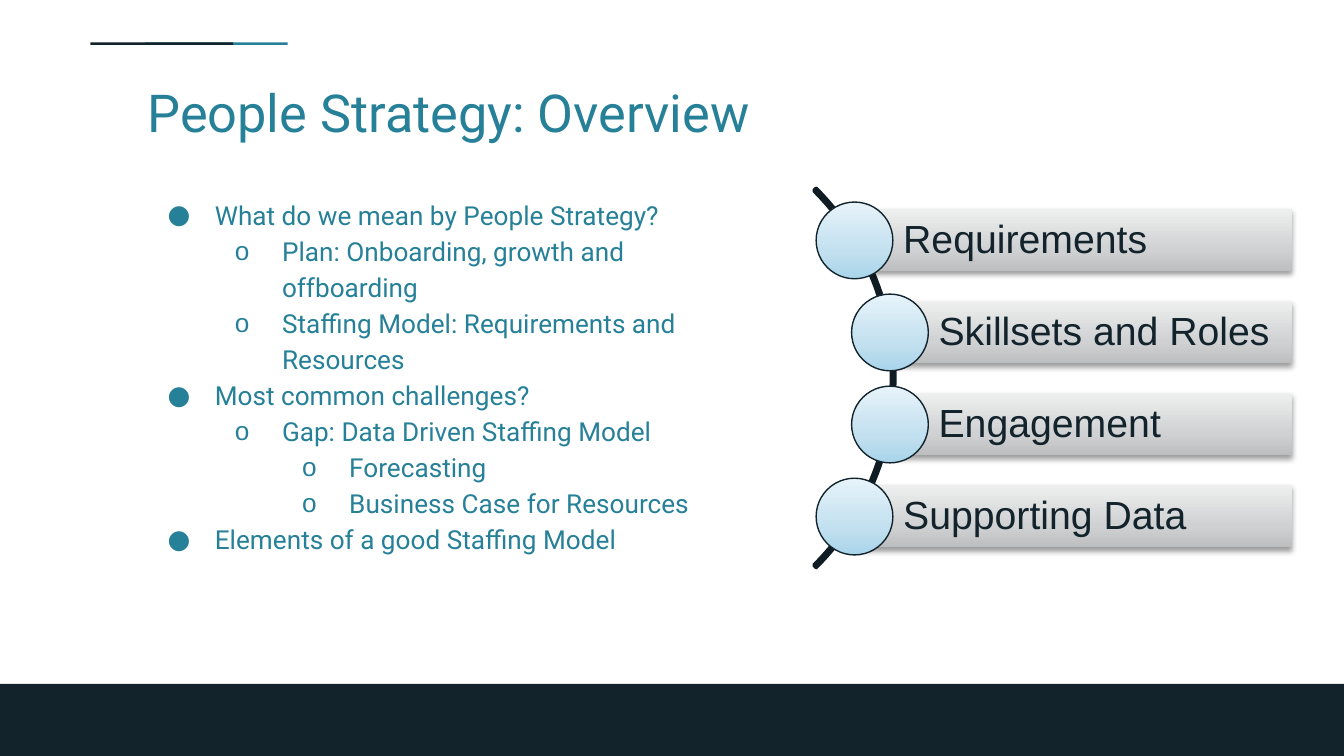
import lxml.etree
import pptx
import pptx.dml.color
import pptx.enum.shapes
import pptx.enum.text
import pptx.oxml.ns
import pptx.util
import copy

Cm = pptx.util.Cm
Pt = pptx.util.Pt
qn = pptx.oxml.ns.qn
RGBColor = pptx.dml.color.RGBColor
MSO_SHAPE = pptx.enum.shapes.MSO_SHAPE
PP_ALIGN = pptx.enum.text.PP_ALIGN
MSO_ANCHOR = pptx.enum.text.MSO_ANCHOR

TEAL = RGBColor(0x26, 0x80, 0x98)
NAVY = RGBColor(0x13, 0x23, 0x2C)
SPINE = RGBColor(0x0F, 0x1C, 0x23)
BLACK = RGBColor(0, 0, 0)
GREYS = [RGBColor(0xBC, 0xBE, 0xBF), RGBColor(0xD0, 0xD1, 0xD2), RGBColor(0xED, 0xEE, 0xEE)]
BLUES = [RGBColor(0xA8, 0xD4, 0xEA), RGBColor(0xC2, 0xE0, 0xEF), RGBColor(0xE7, 0xF3, 0xFA)]

OUTLINE = [
    (0, 1.27, "●", "What do we mean by People Strategy?"),
    (1, 2.54, "o", "Plan: Onboarding, growth and offboarding"),
    (1, 2.54, "o", "Staffing Model: Requirements and Resources"),
    (0, 1.27, "●", "Most common challenges?"),
    (2, 2.54, "o", "Gap: Data Driven Staffing Model"),
    (3, 3.81, "o", "Forecasting"),
    (3, 3.81, "o", "Business Case for Resources"),
    (0, 1.27, "●", "Elements of a good Staffing Model"),
]
ELEMENTS = [
    ("Requirements", 16.15),
    ("Skillsets and Roles", 16.82),
    ("Engagement", 16.82),
    ("Supporting Data", 16.15),
]


def add_plain_shape(slide, kind, left, top, width, height):
    shape = slide.shapes.add_shape(kind, Cm(left), Cm(top), Cm(width), Cm(height))
    shape.shadow.inherit = False
    shape.line.fill.background()
    return shape


def add_block(slide, left, top, width, height, color):
    block = add_plain_shape(slide, MSO_SHAPE.RECTANGLE, left, top, width, height)
    block.fill.solid()
    block.fill.fore_color.rgb = color


def fill_upward(shape, colors):
    shape.fill.gradient()
    shape.fill.gradient_angle = 90
    stop_list = shape._element.spPr.find(qn("a:gradFill")).find(qn("a:gsLst"))
    stop_list.insert(1, copy.deepcopy(stop_list[0]))
    for stop, color, position in zip(shape.fill.gradient_stops, colors, (0, 0.35, 1)):
        stop.color.rgb = color
        stop.position = position


def add_drop_shadow(shape):
    effects = shape._element.spPr.find(qn("a:effectLst"))
    shadow = lxml.etree.SubElement(
        effects, qn("a:outerShdw"), blurRad=str(Pt(3.1)), dist=str(Pt(1.6)),
        dir="5400000", rotWithShape="0")
    color = lxml.etree.SubElement(shadow, qn("a:srgbClr"), val=str(BLACK))
    lxml.etree.SubElement(color, qn("a:alpha"), val="38000")


def set_frame(frame, anchor, left, others):
    frame.word_wrap = True
    frame.auto_size = pptx.enum.text.MSO_AUTO_SIZE.NONE
    frame.vertical_anchor = anchor
    frame.margin_left = Cm(left)
    frame.margin_top = frame.margin_right = frame.margin_bottom = Cm(others)


def add_run(paragraph, text, font, size, color):
    paragraph.alignment = PP_ALIGN.LEFT
    run = paragraph.add_run()
    run.text = text
    run.font.name = font
    run.font.size = Pt(size)
    run.font.color.rgb = color


def set_bullet(paragraph, mark, indent):
    properties = paragraph._p.get_or_add_pPr()
    properties.set("marL", str(Cm(indent)))
    properties.set("indent", str(-Cm(0.89)))
    color = lxml.etree.SubElement(properties, qn("a:buClr"))
    lxml.etree.SubElement(color, qn("a:srgbClr"), val=str(TEAL))
    typeface = "Roboto" if mark == "●" else "Arial"
    lxml.etree.SubElement(properties, qn("a:buFont"), typeface=typeface)
    lxml.etree.SubElement(properties, qn("a:buChar"), char=mark)


def place(placeholder, left, top, width, height):
    placeholder.left, placeholder.top = Cm(left), Cm(top)
    placeholder.width, placeholder.height = Cm(width), Cm(height)
    set_frame(placeholder.text_frame, MSO_ANCHOR.TOP, 0.25, 0.25)


def add_title(slide):
    title = slide.shapes.title
    place(title, 2.54, 1.27, 23.67, 1.6)
    add_run(title.text_frame.paragraphs[0], "People Strategy: Overview", "Roboto", 28, TEAL)


def add_outline(slide):
    outline = slide.placeholders[1]
    place(outline, 2.54, 3.43, 11.28, 8.03)
    frame = outline.text_frame
    for number, (level, indent, mark, text) in enumerate(OUTLINE):
        paragraph = frame.add_paragraph() if number else frame.paragraphs[0]
        set_bullet(paragraph, mark, indent)
        paragraph.level = level
        paragraph.line_spacing = 1.15
        paragraph.space_before = Pt(0)
        add_run(paragraph, text, "Roboto", 14, TEAL)


def add_spine(slide):
    spine = add_plain_shape(slide, MSO_SHAPE.BLOCK_ARC, 6.78, 2.08, 10.13, 10.13)
    for number, value in enumerate((189, 27, 0.006)):
        spine.adjustments[number] = value
    spine.fill.background()
    spine.line.color.rgb = SPINE
    spine.line.width = Pt(2)


def add_element(slide, text, left, top):
    right, height, diameter = 24.41, 1.17, 1.45
    bar = add_plain_shape(slide, MSO_SHAPE.RECTANGLE, left, top, right - left, height)
    fill_upward(bar, GREYS)
    add_drop_shadow(bar)
    set_frame(bar.text_frame, MSO_ANCHOR.MIDDLE, 0.92, 0.15)
    label = bar.text_frame.paragraphs[0]
    label.line_spacing = 0.9
    add_run(label, text, "Arial", 21, NAVY)

    disc = add_plain_shape(slide, MSO_SHAPE.OVAL, left - diameter / 2,
                           top + (height - diameter) / 2, diameter, diameter)
    fill_upward(disc, BLUES)
    disc.line.color.rgb = NAVY
    disc.line.width = Pt(0.75)


def main():
    deck = pptx.Presentation()
    deck.slide_width, deck.slide_height = Cm(25.4), Cm(14.29)
    slide = deck.slides.add_slide(deck.slide_layouts[1])
    add_block(slide, 0, 12.93, 25.4, 1.36, NAVY)
    add_block(slide, 2.74, 0.8, 2.7, 0.05, TEAL)
    add_block(slide, 1.71, 0.8, 2.7, 0.05, NAVY)
    add_title(slide)
    add_outline(slide)
    add_spine(slide)
    for row, (text, left) in enumerate(ELEMENTS):
        add_element(slide, text, left, 3.96 + row * 1.74)
    deck.save("out.pptx")


if __name__ == "__main__":
    main()
